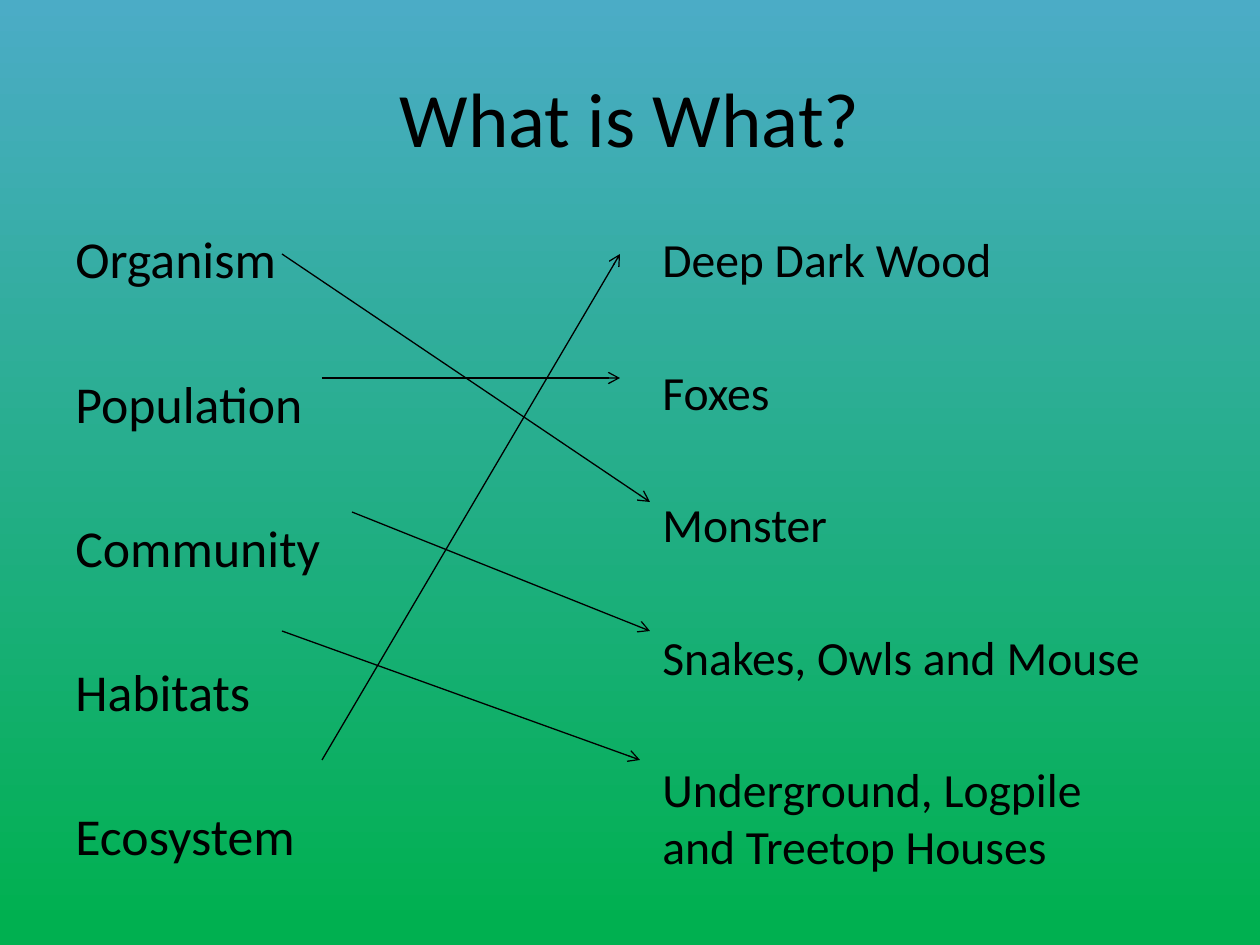
from dataclasses import dataclass

from lxml.etree import SubElement
from pptx import Presentation
from pptx.dml.color import RGBColor
from pptx.enum.shapes import MSO_CONNECTOR
from pptx.enum.text import MSO_ANCHOR as Anchor, PP_ALIGN as Align
from pptx.oxml.ns import qn
from pptx.slide import Slide
from pptx.util import Emu, Pt

PX_PER_INCH = 126


def px(length: int) -> Emu:
    return Emu(round(length * 914400 / PX_PER_INCH))


@dataclass(frozen=True)
class Theme:
    font: str = "Calibri"
    ink: RGBColor = RGBColor(0x00, 0x00, 0x00)
    ground: RGBColor = RGBColor(0x00, 0xB0, 0x50)
    sky: RGBColor = RGBColor(0x4B, 0xAC, 0xC6)
    title_size: float = 44
    term_size: float = 29.6
    example_size: float = 27.2
    line_width: float = 0.75


THEME = Theme()


@dataclass(frozen=True)
class TextBlock:
    left: int
    top: int
    width: int
    height: int
    lines: tuple[str, ...]
    size: float
    gap: float = 0  # points after each line
    align: Align = Align.LEFT
    anchor: Anchor = Anchor.TOP


@dataclass(frozen=True)
class Arrow:
    start: tuple[int, int]
    end: tuple[int, int]


# Title and the two columns to be matched
TEXT_BLOCKS = (
    TextBlock(63, 38, 1134, 157, ("What is What?",), THEME.title_size,
              align=Align.CENTER, anchor=Anchor.MIDDLE),
    TextBlock(63, 221, 378, 624,
              ("Organism", "Population", "Community", "Habitats", "Ecosystem"),
              THEME.term_size, gap=46.8),
    TextBlock(650, 224, 515, 624,
              ("Deep Dark Wood", "Foxes", "Monster", "Snakes, Owls and Mouse",
               "Underground, Logpile and Treetop Houses"),
              THEME.example_size, gap=43),
)

# Each arrow leads from a term to its example
ARROWS = (
    Arrow((282, 254), (650, 502)),
    Arrow((322, 378), (620, 378)),
    Arrow((352, 512), (650, 631)),
    Arrow((282, 631), (640, 760)),
    Arrow((322, 760), (620, 254)),
)


def paint_background(slide: Slide) -> None:
    fill = slide.background.fill
    fill.gradient()
    fill.gradient_angle = 90
    bottom, top = fill.gradient_stops
    bottom.position, bottom.color.rgb = 0.02, THEME.ground
    top.position, top.color.rgb = 1, THEME.sky


def draw_text(slide: Slide, block: TextBlock) -> None:
    shape = slide.shapes.add_textbox(
        px(block.left), px(block.top), px(block.width), px(block.height))
    frame = shape.text_frame
    frame.word_wrap = True
    frame.vertical_anchor = block.anchor
    frame.text = "\n".join(block.lines)
    for paragraph in frame.paragraphs:
        paragraph.alignment = block.align
        paragraph.space_after = Pt(block.gap)
        paragraph.font.name = THEME.font
        paragraph.font.size = Pt(block.size)
        paragraph.font.color.rgb = THEME.ink


def draw_arrow(slide: Slide, arrow: Arrow) -> None:
    connector = slide.shapes.add_connector(
        MSO_CONNECTOR.STRAIGHT, *map(px, arrow.start + arrow.end))
    connector.line.color.rgb = THEME.ink
    connector.line.width = Pt(THEME.line_width)
    # Open arrowhead at the end, and no shadow
    SubElement(connector.line._get_or_add_ln(), qn("a:tailEnd"), type="arrow")
    SubElement(connector._element.spPr, qn("a:effectLst"))


def main() -> None:
    presentation = Presentation()
    presentation.slide_width, presentation.slide_height = px(1260), px(945)
    slide = presentation.slides.add_slide(presentation.slide_layouts[6])
    paint_background(slide)
    for block in TEXT_BLOCKS:
        draw_text(slide, block)
    for arrow in ARROWS:
        draw_arrow(slide, arrow)
    presentation.save("out.pptx")


if __name__ == "__main__":
    main()
